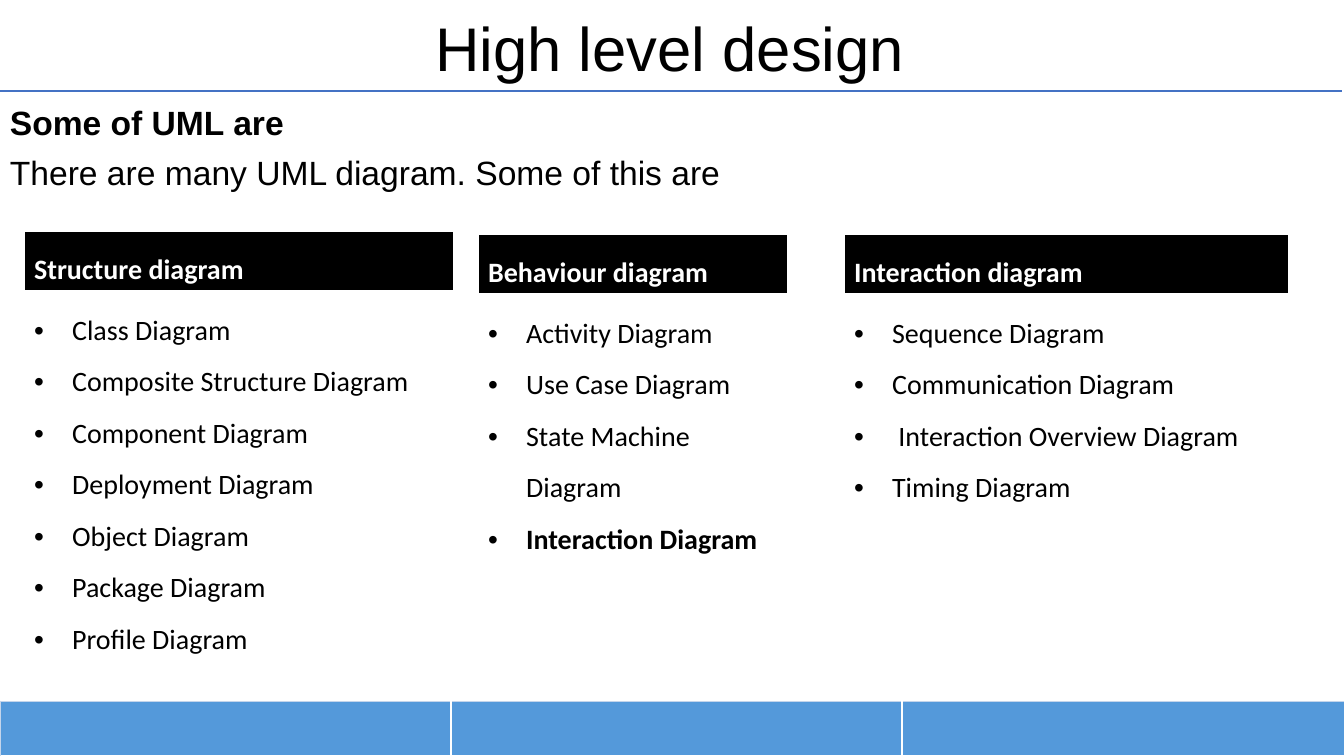
from lxml import etree
from pptx import Presentation
from pptx import util as u
from pptx.dml.color import RGBColor
from pptx.enum import shapes, text
from pptx.oxml.ns import qn

# Content
TITLE = "High level design"
INTRO = [("Some of UML are", True),
         ("There are many UML diagram. Some of this are", False)]
# left, top, width, height, heading, items (text, bold)
GROUPS = [
    (24, 231, 430, 413, "Structure diagram",
     [("Class Diagram", False), ("Composite Structure Diagram", False),
      ("Component Diagram", False), ("Deployment Diagram", False),
      ("Object Diagram", False), ("Package Diagram", False),
      ("Profile Diagram", False)]),
    (478, 234, 310, 363, "Behaviour diagram",
     [("Activity Diagram", False), ("Use Case Diagram", False),
      ("State Machine Diagram", False), ("Interaction Diagram", True)]),
    (844, 234, 445, 363, "Interaction diagram",
     [("Sequence Diagram", False), ("Communication Diagram", False),
      (" Interaction Overview Diagram", False), ("Timing Diagram", False)]),
]
FOOTER_COLUMNS = [451, 451, 442]
COLORS = {"ink": "000000", "paper": "FFFFFF", "rule": "4472C4",
          "footer": "5499DA", "footer edge": "C4D5EB"}
HEADING_HEIGHT = 60
ITEM_INDENT = 38


def px(n):
    return u.Emu(round(n * 914400 / 100.8))


def rgb(name):
    return RGBColor.from_string(COLORS[name])


def write(paragraph, wording, size, font, color, bold=False, spacing=0.9):
    paragraph.text = wording
    paragraph.line_spacing = spacing
    for run in paragraph.runs:
        run.font.size = u.Pt(size)
        run.font.name = font
        run.font.bold = bold
        run.font.color.rgb = rgb(color)


def add_text_area(left, top, width, height, anchor):
    frame = slide.shapes.add_textbox(
        px(left), px(top), px(width), px(height)).text_frame
    frame.word_wrap = True
    frame.vertical_anchor = anchor
    return frame


def add_plain_table(left, top, columns, rows):
    table = slide.shapes.add_table(
        len(rows), len(columns), px(left), px(top),
        px(sum(columns)), px(sum(rows))).table
    table.first_row = table.horz_banding = False
    for column, width in zip(table.columns, columns):
        column.width = px(width)
    for row, height in zip(table.rows, rows):
        row.height = px(height)
    return table


def paint(cell, fill, borders):
    """Fill a cell and set its borders, given as side: (color, points)."""
    cell.fill.solid()
    cell.fill.fore_color.rgb = rgb(fill)
    properties = cell._tc.get_or_add_tcPr()
    for place, side in enumerate(s for s in "LRTB" if s in borders):
        color, points = borders[side]
        edge = etree.Element(qn(f"a:ln{side}"), w=str(u.Pt(points)))
        solid = etree.SubElement(edge, qn("a:solidFill"))
        etree.SubElement(solid, qn("a:srgbClr"), val=COLORS[color])
        properties.insert(place, edge)


def add_bullet(paragraph):
    properties = paragraph._p.get_or_add_pPr()
    properties.set("marL", str(px(ITEM_INDENT)))
    properties.set("indent", str(-px(ITEM_INDENT)))
    etree.SubElement(properties, qn("a:buFont"), typeface="Arial")
    etree.SubElement(properties, qn("a:buChar"), char="•")


deck = Presentation()
deck.slide_width, deck.slide_height = px(1344), px(756)
slide = deck.slides.add_slide(deck.slide_layouts[6])

# Title and introduction
title = add_text_area(-2, 0, 1344, 90, text.MSO_ANCHOR.BOTTOM).paragraphs[0]
write(title, TITLE, 44, "Arial", "ink")
title.alignment = text.PP_ALIGN.CENTER

intro = add_text_area(0, 101, 1344, 595, text.MSO_ANCHOR.TOP)
for i, (wording, bold) in enumerate(INTRO):
    line = intro.add_paragraph() if i else intro.paragraphs[0]
    write(line, wording, 24, "Arial", "ink", bold)
    line.alignment = text.PP_ALIGN.JUSTIFY
    line.space_before = u.Pt(10)

# Footer band
footer = add_plain_table(0, 701, FOOTER_COLUMNS, [55])
for i in range(len(FOOTER_COLUMNS)):
    edges = {"T": ("footer edge", 0.5), "B": ("paper", 1.5)}
    if i == 0:
        edges["L"] = ("footer edge", 0.5)
    if i == len(FOOTER_COLUMNS) - 1:
        edges["R"] = ("footer edge", 0.5)
    paint(footer.cell(0, i), "footer", edges)

# Diagram groups
white_edges = {side: ("paper", 1) for side in "LRTB"}
for left, top, width, height, heading, items in GROUPS:
    group = add_plain_table(left, top, [width],
                            [HEADING_HEIGHT, height - HEADING_HEIGHT])
    head, body = group.cell(0, 0), group.cell(1, 0)
    paint(head, "ink", {**white_edges, "B": ("paper", 3)})
    paint(body, "paper", {**white_edges, "T": ("paper", 3)})
    write(head.text_frame.paragraphs[0], heading, 20, "Calibri", "paper",
          True, 1.5)
    for i, (wording, bold) in enumerate(items):
        frame = body.text_frame
        item = frame.add_paragraph() if i else frame.paragraphs[0]
        write(item, wording, 20, "Calibri", "ink", bold, 1.5)
        add_bullet(item)

# Rule under the title
rule = slide.shapes.add_connector(
    shapes.MSO_CONNECTOR.STRAIGHT, px(-2), px(91), px(1342), px(91))
rule.line.color.rgb = rgb("rule")
rule.line.width = u.Pt(1.5)
etree.SubElement(rule._element.spPr, qn("a:effectLst"))

deck.save("out.pptx")
